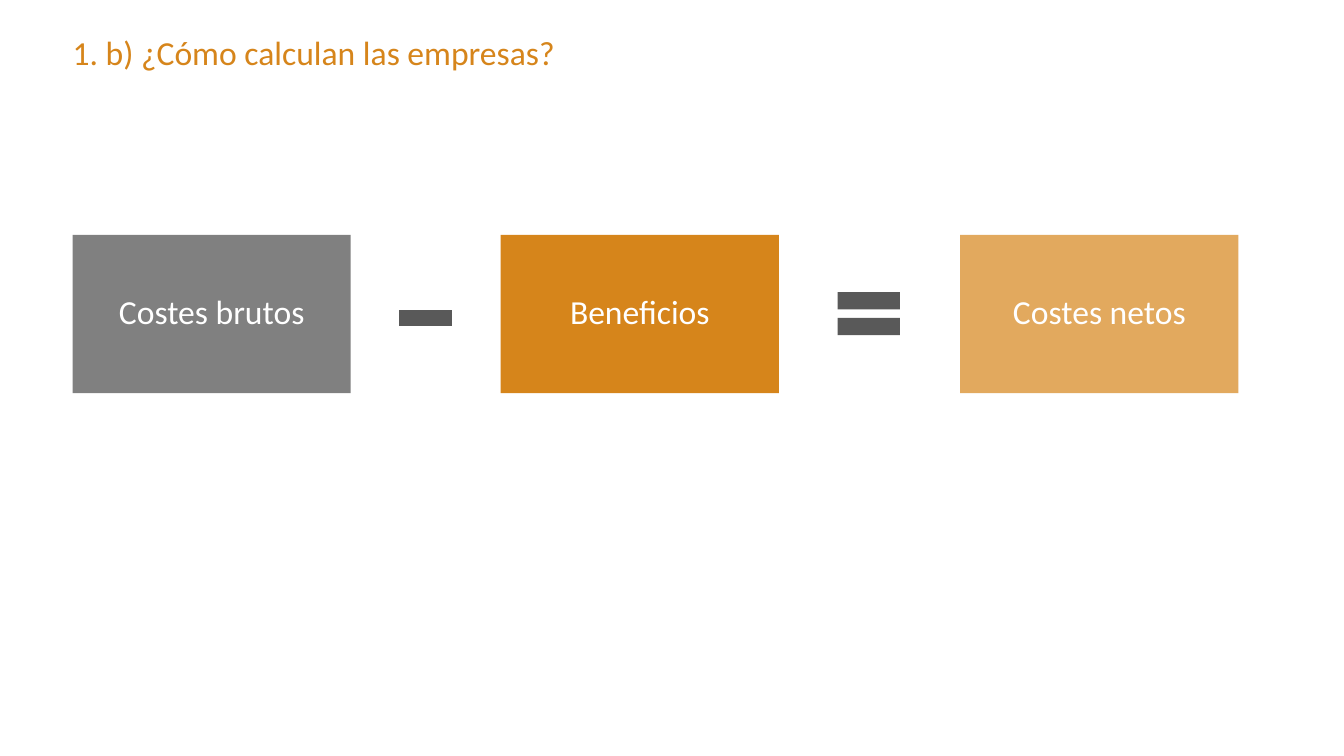
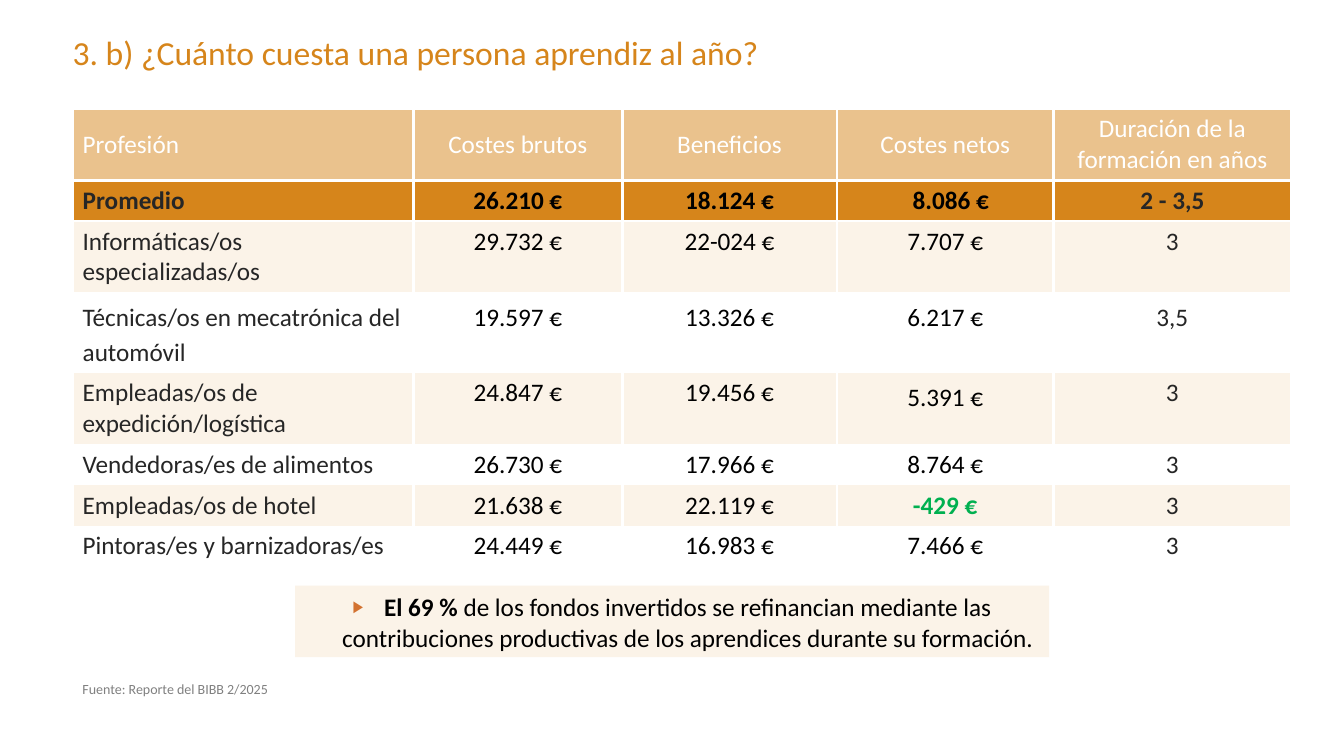
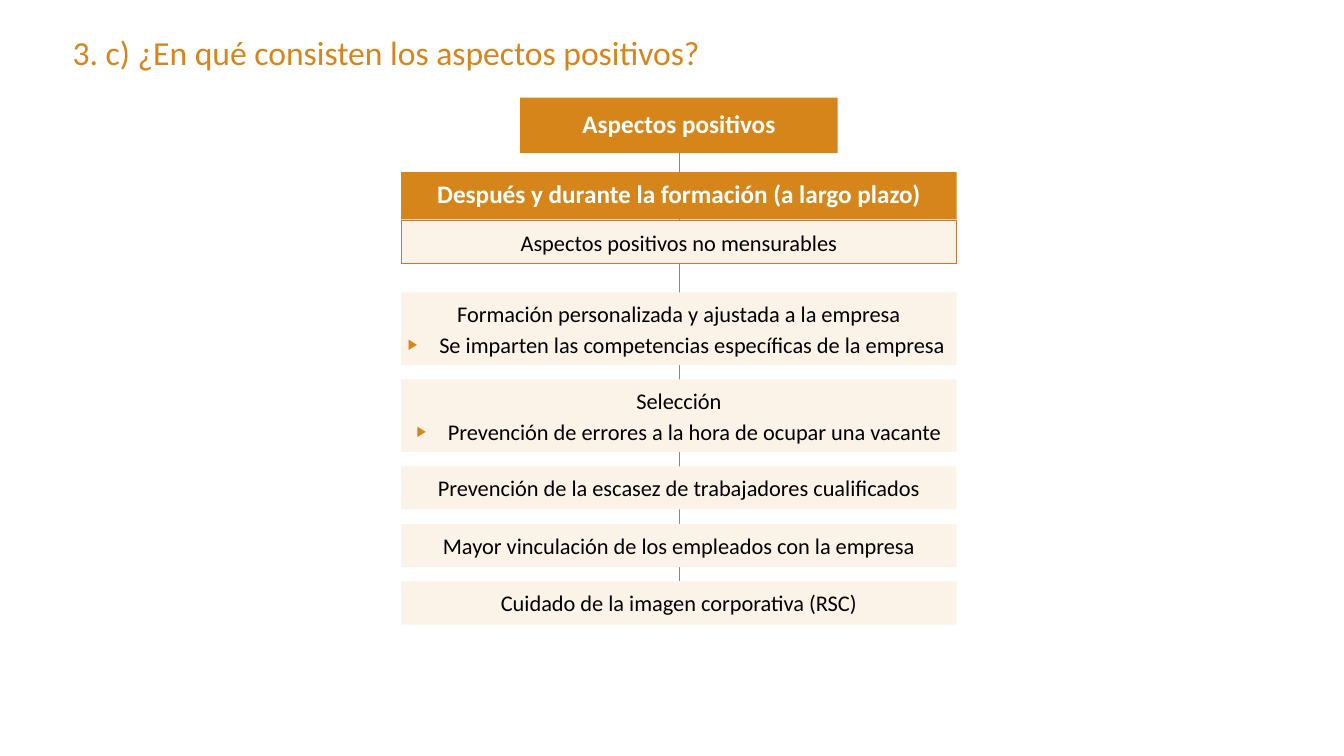
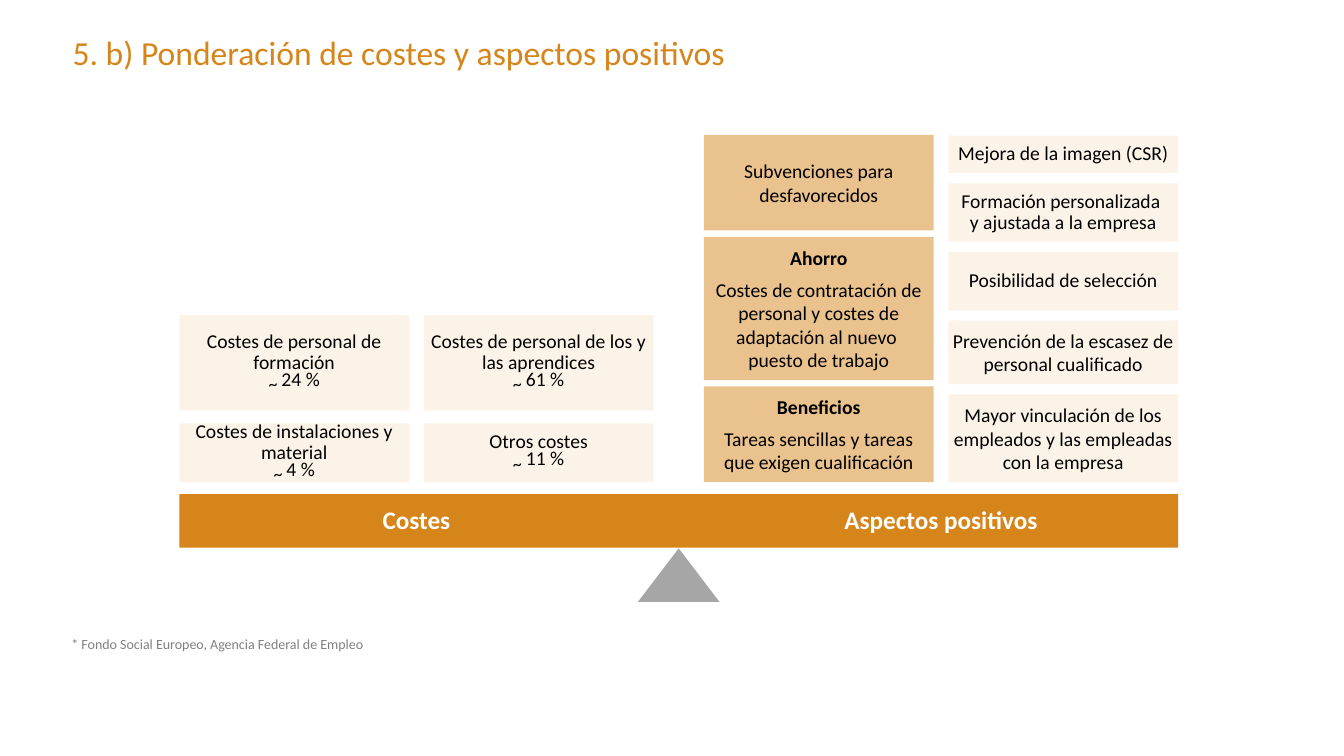
from pptx import Presentation
from pptx.dml.color import RGBColor
from pptx.enum.shapes import MSO_CONNECTOR, MSO_SHAPE
from pptx.enum.text import MSO_ANCHOR, PP_ALIGN
from pptx.oxml.ns import qn
from pptx.util import Cm, Pt
from lxml.etree import SubElement

COLORS = {
    "orange": "D6851B", "rust": "D37230", "sand": "EAC28D", "cream": "FBF3E8",
    "gray": "808080", "dark_gray": "595959", "light_gray": "A6A6A6",
    "ink": "262626", "black": "000000", "white": "FFFFFF", "green": "00B050",
}
FONT = "Calibri"
LEFT = 1.83
CENTER = {"alignment": PP_ALIGN.CENTER}
TIGHT = {**CENTER, "line_spacing": 0.9}
SPACED = {**CENTER, "space_before": Pt(6)}
EXACT = {**CENTER, "line_spacing": Pt(15)}
POINT = {**CENTER, "line_spacing": Pt(22), "space_after": Pt(2)}
LOOSE = {"line_spacing": 1.15, "space_after": Pt(10)}
STYLES = {
    "title": ({}, {"size": 24, "color": "orange"}),
    "note": ({}, {"size": 10, "color": "gray"}),
    "term": (TIGHT, {"size": 24, "color": "white"}),
    "head": (TIGHT, {"size": 18, "color": "white", "bold": True}),
    "row": (SPACED, {"size": 16, "color": "black"}),
    "point": (POINT, {"size": 16, "color": "black", "bullet": "orange"}),
    "callout": (POINT, {"size": 18, "color": "black", "bullet": "rust"}),
    "block": (SPACED, {"size": 14, "color": "black"}),
    "block_head": (SPACED, {"size": 14, "color": "black", "bold": True}),
    "cost": (EXACT, {"size": 14, "color": "black"}),
}
NO_INSETS = (0, 0, 0, 0)
BOX_INSETS = (0.1, 0.2, 0.1, 0.2)
TEXT_INSETS = (0.25, 0.13, 0.25, 0.13)


def rgb(name):
    return RGBColor.from_string(COLORS[name])


def add_bullet(p, color):
    pPr = p._p.get_or_add_pPr()
    pPr.set("marL", str(Cm(0.79)))
    pPr.set("indent", str(-Cm(0.79)))
    clr = SubElement(pPr, qn("a:buClr"))
    SubElement(clr, qn("a:srgbClr"), val=COLORS[color])
    SubElement(pPr, qn("a:buSzPct"), val="65000")
    SubElement(pPr, qn("a:buFont"), typeface="Arial")
    SubElement(pPr, qn("a:buChar"), char="▶")


def add_run(p, text, fmt):
    for i, line in enumerate(text.split("\n")):
        if i:
            p.add_line_break()
        r = p.add_run()
        r.text = line
        r.font.name = FONT
        r.font.size = Pt(fmt["size"])
        r.font.bold = fmt.get("bold", False)
        r.font.color.rgb = rgb(fmt["color"])
        if "baseline" in fmt:
            r._r.get_or_add_rPr().set("baseline", str(fmt["baseline"]))


def write_paragraph(p, para_fmt, font_fmt, runs):
    for name, value in para_fmt.items():
        setattr(p, name, value)
    if "bullet" in font_fmt:
        add_bullet(p, font_fmt["bullet"])
    for run in runs:
        text, extra = (run, {}) if isinstance(run, str) else run
        add_run(p, text, {**font_fmt, **extra})


def write(tf, paras, insets, anchor):
    tf.word_wrap = True
    tf.vertical_anchor = anchor
    for side, value in zip(("left", "top", "right", "bottom"), insets):
        setattr(tf, f"margin_{side}", Cm(value))
    for i, (style, *runs) in enumerate(paras):
        p = tf.add_paragraph() if i else tf.paragraphs[0]
        para_fmt, font_fmt = STYLES[style]
        if not i:
            para_fmt = {k: v for k, v in para_fmt.items() if k != "space_before"}
        write_paragraph(p, para_fmt, font_fmt, runs)


def add_text(s, x, y, w, h, paras, insets=NO_INSETS, anchor=MSO_ANCHOR.TOP):
    tb = s.shapes.add_textbox(Cm(x), Cm(y), Cm(w), Cm(h))
    write(tb.text_frame, paras, insets, anchor)


def add_box(s, x, y, w, h, fill, paras=(), insets=BOX_INSETS,
            anchor=MSO_ANCHOR.MIDDLE, kind=MSO_SHAPE.RECTANGLE, line=None, alpha=None):
    sp = s.shapes.add_shape(kind, Cm(x), Cm(y), Cm(w), Cm(h))
    sp.shadow.inherit = False
    sp.fill.solid()
    sp.fill.fore_color.rgb = rgb(fill)
    if alpha:
        clr = sp._element.spPr.find(qn("a:solidFill"))[0]
        SubElement(clr, qn("a:alpha"), val=str(alpha * 1000))
    if line:
        sp.line.color.rgb = rgb(line)
        sp.line.width = Pt(0.75)
    else:
        sp.line.fill.background()
    if paras:
        write(sp.text_frame, paras, insets, anchor)
    return sp


def add_slide(prs, title):
    s = prs.slides.add_slide(prs.slide_layouts[6])
    add_text(s, LEFT, 0.81, 25, 1.24, [("title", title)])
    return s


def add_note(s, x, y, text):
    add_text(s, x, y, 18, 0.69, [("note", text)], TEXT_INSETS)


def add_equation(s, x, y):
    terms = [(0, "gray", None, "Costes brutos"),
             (10.79, "orange", None, "Beneficios"),
             (22.37, "orange", 70, "Costes netos")]
    for dx, fill, alpha, text in terms:
        add_box(s, x + dx, y, 7.01, 3.99, fill, [("term", text)], NO_INSETS, alpha=alpha)
    signs = [(MSO_SHAPE.MATH_EQUAL, 19, 1.06, 2.13, 1.85),
             (MSO_SHAPE.MATH_MINUS, 7.97, 1.22, 1.85, 1.75)]
    for kind, dx, dy, w, h in signs:
        add_box(s, x + dx, y + dy, w, h, "dark_gray", kind=kind)


def set_borders(cell, sides):
    tcPr = cell._tc.get_or_add_tcPr()
    for side in sides:
        ln = SubElement(tcPr, qn(f"a:ln{side}"), w=str(Pt(2.25)))
        fill = SubElement(ln, qn("a:solidFill"))
        SubElement(fill, qn("a:srgbClr"), val=COLORS["white"])


def add_cost_table(s, x, y, rows):
    widths = [8.59, 5.26, 5.41, 5.46, 5.99]
    heights = [1.8, 1.03, 1.8, 2.02, 1.8, 1.03, 1.03, 1.03]
    frame = s.shapes.add_table(len(rows), len(widths), Cm(x), Cm(y),
                               Cm(sum(widths)), Cm(sum(heights)))
    tbl = frame.table
    tbl.first_row = tbl.horz_banding = False
    tbl._tbl.tblPr.find(qn("a:tableStyleId")).text = "{2D5ABB26-0587-4C30-8999-92F81FD0307C}"
    for col, w in zip(tbl.columns, widths):
        col.width = Cm(w)
    for row, h in zip(tbl.rows, heights):
        row.height = Cm(h)
    for i, values in enumerate(rows):
        fill = ("sand", "orange")[i] if i < 2 else ("cream", "white")[i % 2]
        for j, text in enumerate(values):
            cell = tbl.cell(i, j)
            set_borders(cell, "LRTB" if i < 2 else "LR")
            cell.fill.solid()
            cell.fill.fore_color.rgb = rgb(fill)
            cell.vertical_anchor = MSO_ANCHOR.TOP if i else MSO_ANCHOR.MIDDLE
            gain = text.startswith("-")
            color = "white" if i == 0 else "green" if gain else "ink" if j in (0, 4) else "black"
            para_fmt = dict(CENTER) if j else {}
            if i == 3 or (i, j) == (4, 3):
                para_fmt.update(LOOSE)
            if (i, j) == (1, 3):
                cell.margin_left = Cm(0.54)
            font_fmt = {"size": 18, "color": color, "bold": i == 1 or gain}
            write_paragraph(cell.text_frame.paragraphs[0], para_fmt, font_fmt, [text])


def add_benefit_chain(s, x, y, w):
    head_w, head_h, gap = 8, 1.4, 0.36
    head = add_box(s, x + (w - head_w) / 2, y, head_w, head_h, "orange",
                   [("head", "Aspectos positivos")], NO_INSETS)
    benefits = [
        (1.83, [("row", "Formación personalizada y ajustada a la empresa"),
                ("point", "Se imparten las competencias específicas de la empresa ")]),
        (1.83, [("row", "Selección"),
                ("point", "Prevención de errores a la hora de ocupar una vacante")]),
        (1.09, [("row", "Prevención de la escasez de trabajadores cualificados")]),
        (1.09, [("row", "Mayor vinculación de los empleados con la empresa")]),
        (1.09, [("row", "Cuidado de la imagen corporativa (RSC)")]),
    ]
    placed, top = [], y + 4.91
    for h, paras in benefits:
        placed.append((top, h, paras))
        top += h + gap
    top, h, paras = placed.pop()
    last = add_box(s, x, top, w, h, "cream", paras)
    line = s.shapes.add_connector(MSO_CONNECTOR.STRAIGHT, 0, 0, 0, 0)
    line.begin_connect(head, 2)
    line.end_connect(last, 0)
    line.line.color.rgb = rgb("rust")
    line.line.width = Pt(0.5)
    SubElement(line._element.spPr, qn("a:effectLst"))
    add_box(s, x, y + 1.88, w, 1.19, "orange",
            [("head", "Después y durante la formación (a largo plazo)")])
    add_box(s, x, y + 3.1, w, 1.09, "cream",
            [("row", "Aspectos positivos no mensurables")], line="rust")
    for top, h, paras in placed:
        add_box(s, x, top, w, h, "cream", paras)


def add_stack(s, x, bottom, w, gap, fill, blocks):
    for h, paras in blocks:
        bottom -= h
        add_box(s, x, bottom, w, h, fill, paras)
        bottom -= gap


def cost(text, share):
    return [("cost", text), ("cost", ("~ ", {"size": 22, "baseline": -14000}), share)]


def add_balance(s, x, y, w, h):
    block_w, step = 5.79, 6.16
    pair_w = block_w + step
    right = x + w - pair_w
    columns = [
        (x, 0.32, "cream", [
            (1.48, cost("Costes de instalaciones y material", "4 %")),
            (2.41, cost("Costes de personal de formación", "24 %"))]),
        (x + step, 0.32, "cream", [
            (1.48, cost("Otros costes", "11 %")),
            (2.41, cost("Costes de personal de los y las aprendices", "61 %"))]),
        (right, 0.16, "sand", [
            (2.41, [("block_head", "Beneficios"),
                    ("block", "Tareas sencillas y tareas que exigen cualificación")]),
            (3.61, [("block_head", "Ahorro"),
                    ("block", "Costes de contratación de personal y costes de "
                              "adaptación al nuevo \npuesto de trabajo")]),
            (2.41, [("block", "Subvenciones para desfavorecidos")])]),
        (right + step, 0.26, "cream", [
            (2.21, [("block", "Mayor vinculación de los empleados y las empleadas con la empresa")]),
            (1.6, [("block", "Prevención de la escasez de personal cualificado")]),
            (1.47, [("cost", "Posibilidad de selección")]),
            (1.47, [("cost", "Formación personalizada \ny ajustada a la empresa")]),
            (0.94, [("cost", "Mejora de la imagen (CSR)")])]),
    ]
    for left, gap, fill, blocks in columns:
        add_stack(s, left, y - 0.3, block_w, gap, fill, blocks)
    add_box(s, x, y, w, h, "orange")
    for left, text in ((x, "Costes"), (right, "Aspectos positivos")):
        add_text(s, left, y, pair_w, h, [("head", text)], anchor=MSO_ANCHOR.MIDDLE)
    pivot_w = 2.06
    add_box(s, x + (w - pivot_w) / 2, y + h + 0.02, pivot_w, 1.35, "light_gray",
            kind=MSO_SHAPE.ISOSCELES_TRIANGLE)


COST_ROWS = [
    ("Profesión", "Costes brutos", "Beneficios", "Costes netos", "Duración de la formación en años"),
    ("Promedio", "26.210 €", "18.124 €", "8.086 €", "2 - 3,5"),
    ("Informáticas/os especializadas/os", "29.732 €", "22-024 €", "7.707 €", "3"),
    ("Técnicas/os en mecatrónica del automóvil", "19.597 €", "13.326 €", "6.217 €", "3,5"),
    ("Empleadas/os de expedición/logística", "24.847 €", "19.456 €", "5.391 €", "3"),
    ("Vendedoras/es de alimentos", "26.730 €", "17.966 €", "8.764 €", "3"),
    ("Empleadas/os de hotel", "21.638 €", "22.119 €", "-429 €", "3"),
    ("Pintoras/es y barnizadoras/es", "24.449 €", "16.983 €", "7.466 €", "3"),
]


def main():
    prs = Presentation()
    prs.slide_width, prs.slide_height = Cm(33.87), Cm(19.05)

    s = add_slide(prs, "1. b) ¿Cómo calculan las empresas?")
    add_equation(s, LEFT, 5.92)

    s = add_slide(prs, "3. b) ¿Cuánto cuesta una persona aprendiz al año?")
    add_cost_table(s, LEFT, 2.74, COST_ROWS)
    add_box(s, 7.44, 14.76, 19, 1.8, "cream",
            [("callout", ("El 69 % ", {"bold": True}),
              "de los fondos invertidos se refinancian mediante las "
              "contribuciones productivas de los aprendices durante su formación.")],
            TEXT_INSETS, MSO_ANCHOR.TOP)
    add_note(s, LEFT, 17.02, "Fuente: Reporte del BIBB 2/2025")

    s = add_slide(prs, "3. c) ¿En qué consisten los aspectos positivos?")
    add_benefit_chain(s, 10.11, 2.46, 14)

    s = add_slide(prs, "5. b) Ponderación de costes y aspectos positivos")
    add_balance(s, 4.52, 12.45, 25.17, 1.35)
    add_note(s, 1.55, 15.88, "* Fondo Social Europeo, Agencia Federal de Empleo")

    prs.save("out.pptx")


if __name__ == "__main__":
    main()
